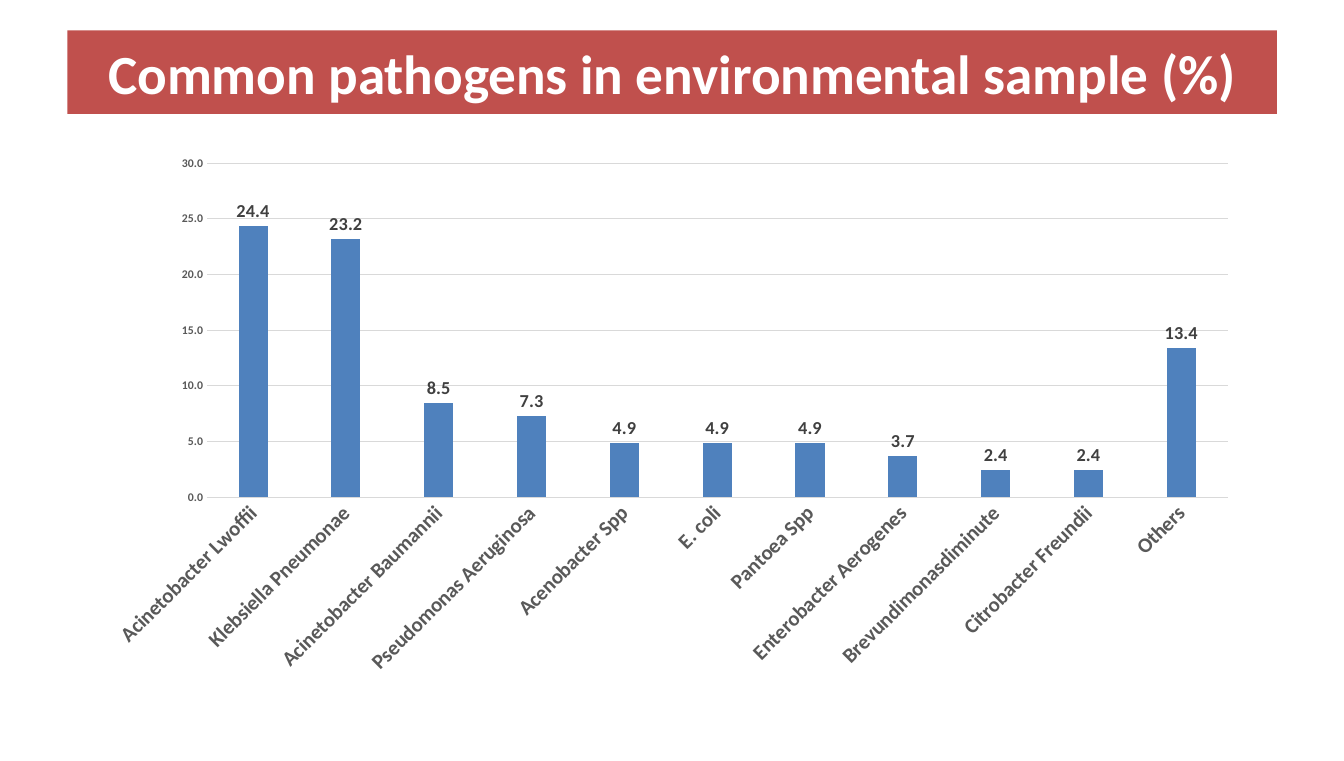
import pptx
import pptx.chart.data
import pptx.dml.color
import pptx.enum.chart
import pptx.enum.text
import pptx.oxml.ns
import pptx.util
from dataclasses import dataclass

TITLE = "Common pathogens in environmental sample (%)"
PATHOGENS = {
    "Acinetobacter Lwoffii": 24.4,
    "Klebsiella Pneumonae": 23.2,
    "Acinetobacter Baumannii": 8.5,
    "Pseudomonas Aeruginosa": 7.3,
    "Acenobacter Spp": 4.9,
    "E. coli": 4.9,
    "Pantoea Spp": 4.9,
    "Enterobacter Aerogenes": 3.7,
    "Brevundimonasdiminute": 2.4,
    "Citrobacter Freundii": 2.4,
    "Others": 13.4,
}
SLIDE_SIZE = (1029.6, 583.2)
BANNER_BOX = (51.6, 23.2, 926.64, 64.2)
CHART_BOX = (70.56, 111.6, 887.76, 414)
NUMBER_FORMAT = "0.0"
AUTOMATIC_ROTATION = "-60000000"

Pt = pptx.util.Pt


@dataclass(frozen=True)
class Theme:
    font: str = "Calibri"
    banner: str = "C0504D"
    banner_text: str = "FFFFFF"
    bar: str = "4F81BD"
    grid: str = "D9D9D9"
    axis_text: str = "595959"
    value_text: str = "404040"
    chart_text: str = "000000"
    title_size: float = 42.3
    category_size: float = 16
    scale_size: float = 9
    value_size: float = 14
    chart_size: float = 10


THEME = Theme()


def apply(target, formats):
    for attribute, value in formats.items():
        setattr(target, attribute, value)


def rgb(colour):
    return pptx.dml.color.RGBColor.from_string(colour)


def style_font(font, size, colour, bold=True):
    apply(font, {"name": THEME.font, "size": Pt(size), "bold": bold})
    font.color.rgb = rgb(colour)


def style_line(line):
    line.color.rgb = rgb(THEME.grid)
    line.width = Pt(0.75)


def add_banner(slide):
    banner = slide.shapes.title
    apply(banner, dict(zip(("left", "top", "width", "height"), map(Pt, BANNER_BOX))))
    banner.fill.solid()
    banner.fill.fore_color.rgb = rgb(THEME.banner)
    frame = banner.text_frame
    frame.text = TITLE
    apply(frame, {
        "word_wrap": True,
        "auto_size": pptx.enum.text.MSO_AUTO_SIZE.NONE,
        "vertical_anchor": pptx.enum.text.MSO_ANCHOR.MIDDLE,
        "margin_left": Pt(7.92), "margin_right": Pt(7.92),
        "margin_top": Pt(3.6), "margin_bottom": Pt(3.6),
    })
    heading = frame.paragraphs[0]
    heading.alignment = pptx.enum.text.PP_ALIGN.CENTER
    style_font(heading.runs[0].font, THEME.title_size, THEME.banner_text)


def add_pathogen_chart(slide):
    shares = pptx.chart.data.CategoryChartData(number_format=NUMBER_FORMAT)
    shares.categories = list(PATHOGENS)
    shares.add_series("Series 1", list(PATHOGENS.values()))
    chart = slide.shapes.add_chart(
        pptx.enum.chart.XL_CHART_TYPE.COLUMN_CLUSTERED, *map(Pt, CHART_BOX), shares).chart
    apply(chart, {"has_legend": False, "has_title": False})
    style_font(chart.font, THEME.chart_size, THEME.chart_text, bold=False)

    bars = chart.plots[0]
    apply(bars, {"gap_width": 219, "overlap": -27, "vary_by_categories": False})
    fill = bars.series[0].format.fill
    fill.solid()
    fill.fore_color.rgb = rgb(THEME.bar)

    values = bars.series[0].data_labels
    apply(values, {
        "show_value": True, "number_format": NUMBER_FORMAT, "number_format_is_linked": False,
        "position": pptx.enum.chart.XL_LABEL_POSITION.OUTSIDE_END,
    })
    style_font(values.font, THEME.value_size, THEME.value_text)

    pathogens, scale = chart.category_axis, chart.value_axis
    for axis, size in ((pathogens, THEME.category_size), (scale, THEME.scale_size)):
        apply(axis, {"major_tick_mark": pptx.enum.chart.XL_TICK_MARK.NONE,
                     "minor_tick_mark": pptx.enum.chart.XL_TICK_MARK.NONE})
        style_font(axis.tick_labels.font, size, THEME.axis_text)
        label_body = axis._element.find(".//" + pptx.oxml.ns.qn("a:bodyPr"))
        label_body.set("rot", AUTOMATIC_ROTATION)
        label_body.set("vert", "horz")
    style_line(pathogens.format.line)
    apply(scale, {"minimum_scale": 0, "maximum_scale": 30, "major_unit": 5,
                  "has_major_gridlines": True})
    apply(scale.tick_labels, {"number_format": NUMBER_FORMAT, "number_format_is_linked": False})
    scale.format.line.fill.background()
    style_line(scale.major_gridlines.format.line)


def main():
    deck = pptx.Presentation()
    apply(deck, dict(zip(("slide_width", "slide_height"), map(Pt, SLIDE_SIZE))))
    slide = deck.slides.add_slide(deck.slide_layouts.get_by_name("Title Only"))
    add_banner(slide)
    add_pathogen_chart(slide)
    deck.save("out.pptx")


if __name__ == "__main__":
    main()
